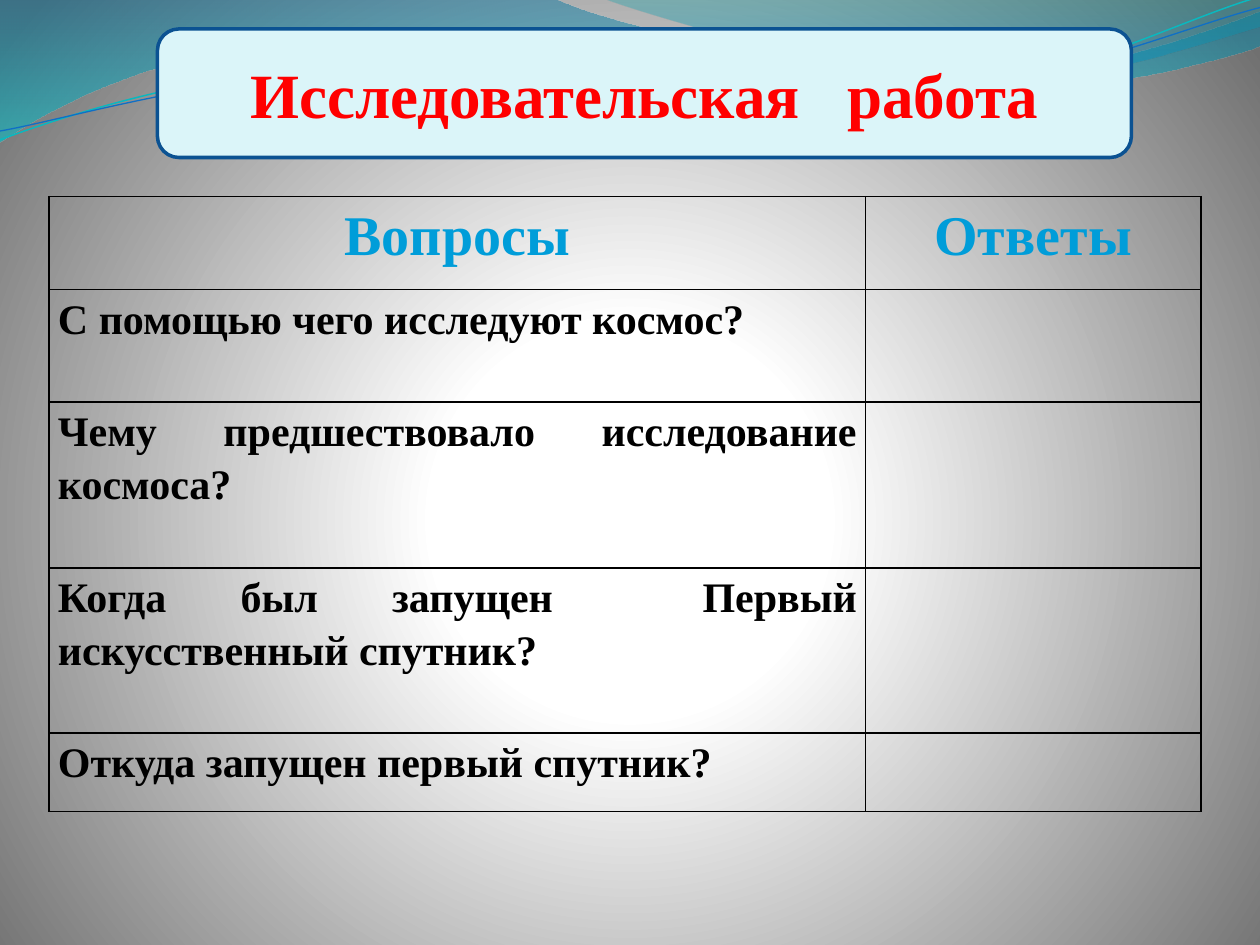
from lxml import etree
from pptx import Presentation
from pptx.dml.color import RGBColor
from pptx.enum.shapes import MSO_SHAPE
from pptx.enum.text import MSO_ANCHOR, PP_ALIGN
from pptx.oxml import parse_xml
from pptx.oxml.ns import nsdecls, qn
from pptx.util import Inches, Pt

ROUNDED = MSO_SHAPE.ROUNDED_RECTANGLE
CENTER, JUSTIFY = PP_ALIGN.CENTER, PP_ALIGN.JUSTIFY
TOP, MIDDLE = MSO_ANCHOR.TOP, MSO_ANCHOR.MIDDLE
FONT = "Times New Roman"
COLORS = {
    "title": "FF0000", "panel": "DBF5F9", "panel_edge": "0B5292",
    "header": "009DD9", "text": "000000", "border": "000000",
    "teal_line": "0AB8BF", "blue_line": "0F6FC6",
}

# "|" marks a space that is widened by the gap of its text
WIDE_SPACE = "|"
TITLE = "Исследовательская|работа"
HEADERS = ("Вопросы", "Ответы")
QUESTIONS = (
    "С помощью чего исследуют космос?",
    "Чему предшествовало исследование космоса?",
    "Когда был запущен|Первый искусственный спутник?",
    "Откуда запущен первый спутник?",
)
COLUMN_WIDTHS = (6.48, 2.66)
ROW_HEIGHTS = (0.74, 0.89, 1.32, 1.31, 0.62)

# Gradient stops: position %, colour, opacity %
BACKGROUND = ((0, "FFFFFF", 100), (25, "FFFFFF", 100), (100, "707070", 100))
BACKGROUND_SHADE = ('<a:path path="circle"><a:fillToRect l="10000" t="110000" '
                    'r="10000" b="100000"/></a:path>')
DOWNWARD_SHADE = '<a:lin ang="5400000" scaled="0"/>'

# Each step holds one point (straight) or three points (Bezier curve)
WAVES = (
    {"start": (0, 0), "stops": ((0, "0074A1", 45), (100, "00C6CF", 55)), "steps": (
        ((4.4, -0.01),),
        ((4.76, 0.17), (6.64, 0.63), (7.58, 0.63)),
        ((8.53, 0.63), (9.58, 0.26), (10, 0.09)),
        ((10.01, 0.36),),
        ((9.83, 0.44), (8.7, 0.76), (7.46, 0.75)),
        ((6.22, 0.75), (3.82, 0.28), (2.57, 0.34)),
        ((1.29, 0.36), (0.46, 0.83), (-0.01, 1.13)))},
    {"start": (4.79, -0.01), "stops": ((0, "00A1A9", 30), (80, "008BBF", 45)), "steps": (
        ((5.09, 0.11), (6.82, 0.62), (7.69, 0.65)),
        ((8.56, 0.69), (9.61, 0.32), (10, 0.21)),
        ((10, 0),))},
    {"start": (0, 1.11), "line": ("teal_line", 0.85), "steps": (
        ((0.48, 0.93), (1.58, 0.57), (2.77, 0.52)),
        ((3.95, 0.47), (5.93, 0.89), (7.13, 0.8)),
        ((8.33, 0.71), (9.38, 0.15), (9.98, -0.02)))},
    {"start": (0, 1.04), "line": ("blue_line", 0.75), "steps": (
        ((0.47, 0.96), (1.64, 0.61), (2.83, 0.56)),
        ((4.03, 0.51), (5.97, 0.84), (7.17, 0.75)),
        ((8.36, 0.67), (9.41, 0.21), (10, 0.06)))},
)


def rgb(name):
    return RGBColor.from_string(COLORS[name])


def gradient(stops, shade):
    marks = "".join(
        f'<a:gs pos="{position * 1000}"><a:srgbClr val="{color}">'
        f'<a:alpha val="{opacity * 1000}"/></a:srgbClr></a:gs>'
        for position, color, opacity in stops)
    return parse_xml(f'<a:gradFill {nsdecls("a")} rotWithShape="1">'
                     f'<a:gsLst>{marks}</a:gsLst>{shade}</a:gradFill>')


def apply_gradient(fill, properties, stops, shade):
    """Replace the fill held by a properties element with a custom gradient."""
    fill.gradient()
    properties.replace(properties.find(qn("a:gradFill")), gradient(stops, shade))


def bend_segments(shape, steps):
    """Join each run of three straight segments into one Bezier curve."""
    segments = iter(list(shape._element.iter(qn("a:lnTo"))))
    for step in steps:
        group = [next(segments) for _ in step]
        if len(group) == 3:
            curve = etree.Element(qn("a:cubicBezTo"))
            group[0].addprevious(curve)
            for segment in group:
                curve.append(segment[0])
                segment.getparent().remove(segment)


def add_wave(slide, start, steps, stops=None, line=None):
    points = [(Inches(x), Inches(y)) for x, y in (start, *(p for step in steps for p in step))]
    builder = slide.shapes.build_freeform(*points[0])
    builder.add_line_segments(points[1:], close=bool(stops))
    wave = builder.convert_to_shape()
    bend_segments(wave, steps)
    wave.shadow.inherit = False
    if stops:
        apply_gradient(wave.fill, wave.fill._xPr, stops, DOWNWARD_SHADE)
        wave.line.fill.background()
    else:
        color, width = line
        wave.fill.background()
        wave.line.color.rgb = rgb(color)
        wave.line.width = Pt(width)


def set_text(frame, text, *, size, color, align, spacing=1.0, gap=0):
    """Fill a frame with bold text; gap widens the marked space, in points."""
    paragraph = frame.paragraphs[0]
    paragraph.alignment = align
    paragraph.line_spacing = spacing
    for part in filter(None, text.partition(WIDE_SPACE)):
        run = paragraph.add_run()
        run.text = part.replace(WIDE_SPACE, " ")
        run.font.name = FONT
        run.font.size = Pt(size)
        run.font.bold = True
        run.font.color.rgb = rgb(color)
        if part == WIDE_SPACE:
            run.font._element.set("spc", str(gap * 100))


def add_title(slide):
    panel = slide.shapes.add_shape(
        ROUNDED, Inches(1.25), Inches(0.23), Inches(7.73), Inches(1.02))
    panel.shadow.inherit = False
    panel.fill.solid()
    panel.fill.fore_color.rgb = rgb("panel")
    panel.line.color.rgb = rgb("panel_edge")
    panel.line.width = Pt(2)
    panel.text_frame.word_wrap = True
    panel.text_frame.vertical_anchor = MIDDLE
    set_text(panel.text_frame, TITLE, size=36, color="title", align=CENTER, gap=18)


def format_cell(cell):
    cell.margin_left = cell.margin_right = Inches(0.07)
    cell.margin_top = cell.margin_bottom = 0
    cell.vertical_anchor = TOP
    cell.fill.background()
    properties = cell._tc.get_or_add_tcPr()
    for i, side in enumerate(("lnL", "lnR", "lnT", "lnB")):
        properties.insert(i, parse_xml(
            f'<a:{side} {nsdecls("a")} w="{Pt(1)}"><a:solidFill>'
            f'<a:srgbClr val="{COLORS["border"]}"/></a:solidFill></a:{side}>'))


def add_questions(slide):
    table = slide.shapes.add_table(
        len(ROW_HEIGHTS), len(COLUMN_WIDTHS), Inches(0.39), Inches(1.56),
        Inches(sum(COLUMN_WIDTHS)), Inches(sum(ROW_HEIGHTS))).table
    table.horz_banding = False
    for column, width in zip(table.columns, COLUMN_WIDTHS):
        column.width = Inches(width)
    for row, height in zip(table.rows, ROW_HEIGHTS):
        row.height = Inches(height)
    for cell in table.iter_cells():
        format_cell(cell)
    for i, header in enumerate(HEADERS):
        set_text(table.cell(0, i).text_frame, header,
                 size=32, color="header", align=CENTER, spacing=1.15)
    for i, question in enumerate(QUESTIONS, 1):
        set_text(table.cell(i, 0).text_frame, question,
                 size=24, color="text", align=JUSTIFY, spacing=1.15, gap=43)


def main():
    deck = Presentation()
    deck.slide_width, deck.slide_height = Inches(10), Inches(7.5)
    slide = deck.slides.add_slide(deck.slide_layouts[6])
    fill = slide.background.fill
    apply_gradient(fill, fill._xPr, BACKGROUND, BACKGROUND_SHADE)
    for wave in WAVES:
        add_wave(slide, **wave)
    add_title(slide)
    add_questions(slide)
    deck.save("out.pptx")


if __name__ == "__main__":
    main()
